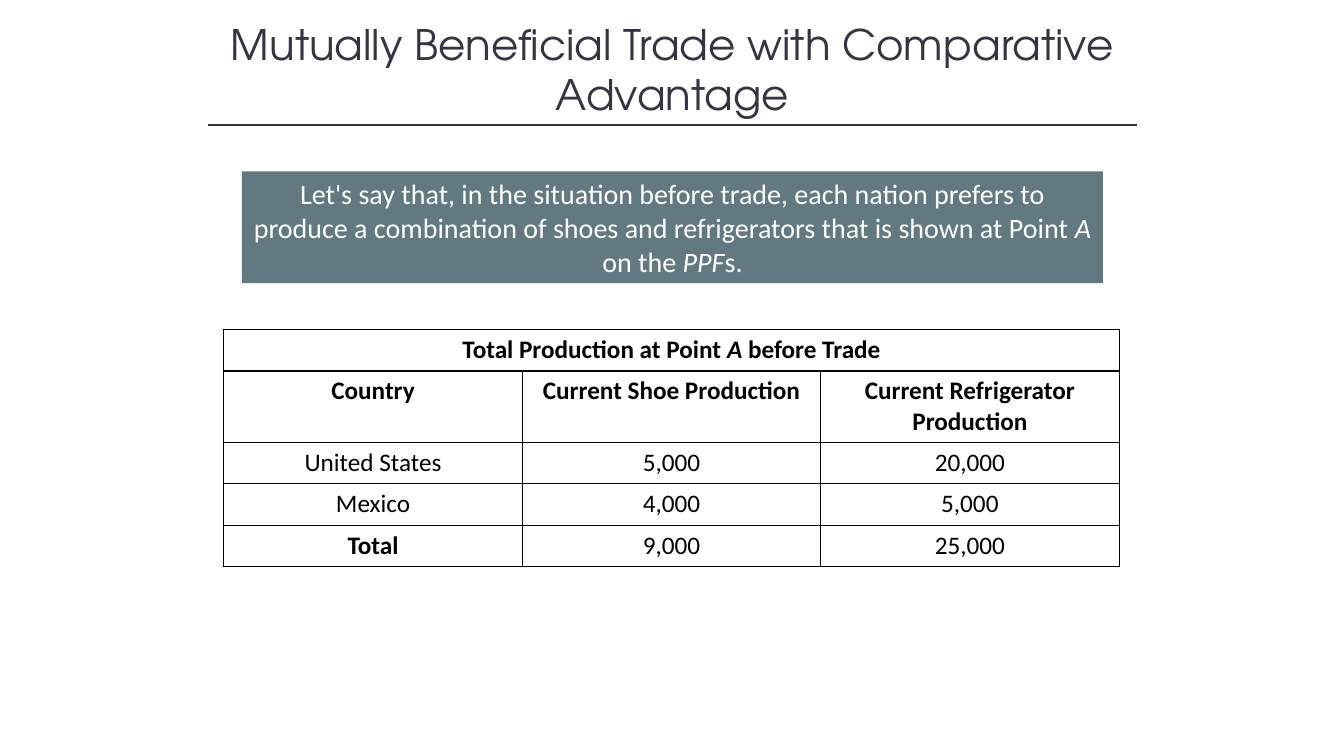
from dataclasses import dataclass

from lxml.etree import SubElement
from pptx import Presentation
from pptx.dml.color import RGBColor
from pptx.enum.shapes import MSO_CONNECTOR, MSO_SHAPE
from pptx.enum.text import MSO_ANCHOR, MSO_AUTO_SIZE, PP_ALIGN
from pptx.oxml.ns import qn
from pptx.util import Inches, Pt


@dataclass(frozen=True)
class Theme:
    ink: str = "323542"
    panel: str = "627981"
    light: str = "FFFFFF"
    dark: str = "000000"
    head: str = "TeX Gyre Adventor"
    body: str = "Calibri"
    title: int = 30
    note: int = 20
    cell: int = 18


theme = Theme()


def write(frame, text, font, size, color, bold=False):
    """Fill the frame with one centred paragraph; *stars* mark italics."""
    frame.word_wrap = True
    para = frame.paragraphs[0]
    para.alignment = PP_ALIGN.CENTER
    para.font.name = font
    para.font.size = Pt(size)
    para.font.bold = bold
    para.font.color.rgb = RGBColor.from_string(color)
    for i, part in enumerate(text.split("*")):
        run = para.add_run()
        run.text = part
        if i % 2:
            run.font.italic = True


def border(cell):
    """Draw a thin line on all four sides of the cell."""
    props = cell._tc.get_or_add_tcPr()
    for side in ("lnL", "lnR", "lnT", "lnB"):
        line = SubElement(props, qn(f"a:{side}"), w=str(Pt(1)))
        fill = SubElement(line, qn("a:solidFill"))
        SubElement(fill, qn("a:srgbClr"), val=theme.dark)


deck = Presentation()
deck.slide_width = Inches(13.33)
deck.slide_height = Inches(7.5)
slide = deck.slides.add_slide(deck.slide_layouts[5])
shapes = slide.shapes

# Title and rule
title = shapes.title
title.left, title.top = Inches(1.67), Inches(0.13)
title.width, title.height = Inches(10), Inches(1.11)
title.text_frame.auto_size = MSO_AUTO_SIZE.NONE
title.text_frame.vertical_anchor = MSO_ANCHOR.MIDDLE
write(title.text_frame, "Mutually Beneficial Trade with Comparative Advantage",
      theme.head, theme.title, theme.ink)

rule = shapes.add_connector(MSO_CONNECTOR.STRAIGHT, Inches(2.06), Inches(1.24),
                            Inches(11.28), Inches(1.24))
rule.line.color.rgb = RGBColor.from_string(theme.ink)
rule.line.width = Pt(1)
SubElement(rule._element.spPr, qn("a:effectLst"))

# Statement panel
panel = shapes.add_shape(MSO_SHAPE.RECTANGLE, Inches(2.4), Inches(1.7),
                         Inches(8.54), Inches(1.11))
panel.shadow.inherit = False
panel.fill.solid()
panel.fill.fore_color.rgb = RGBColor.from_string(theme.panel)
panel.line.fill.background()
panel.text_frame.vertical_anchor = MSO_ANCHOR.MIDDLE
write(panel.text_frame,
      "Let's say that, in the situation before trade, each nation prefers to "
      "produce a combination of shoes and refrigerators that is shown at "
      "Point *A* on the *PPF*s.",
      theme.body, theme.note, theme.light)

# Production table
rows = [
    ("Total Production at Point *A* before Trade", "", ""),
    ("Country", "Current Shoe Production", "Current Refrigerator Production"),
    ("United States", "5,000", "20,000"),
    ("Mexico", "4,000", "5,000"),
    ("Total", "9,000", "25,000"),
]
heights = [0.41, 0.7, 0.41, 0.41, 0.41]
table = shapes.add_table(len(rows), 3, Inches(2.22), Inches(3.27),
                         Inches(8.88), Inches(sum(heights))).table
table.first_row = table.horz_banding = False
for col in table.columns:
    col.width = Inches(2.96)
table.cell(0, 0).merge(table.cell(0, 2))
for r, row in enumerate(rows):
    table.rows[r].height = Inches(heights[r])
    for c, text in enumerate(row):
        cell = table.cell(r, c)
        border(cell)
        cell.fill.background()
        if not cell.is_spanned:
            write(cell.text_frame, text, theme.body, theme.cell, theme.dark,
                  bold=r < 2 or text == "Total")

deck.save("out.pptx")
